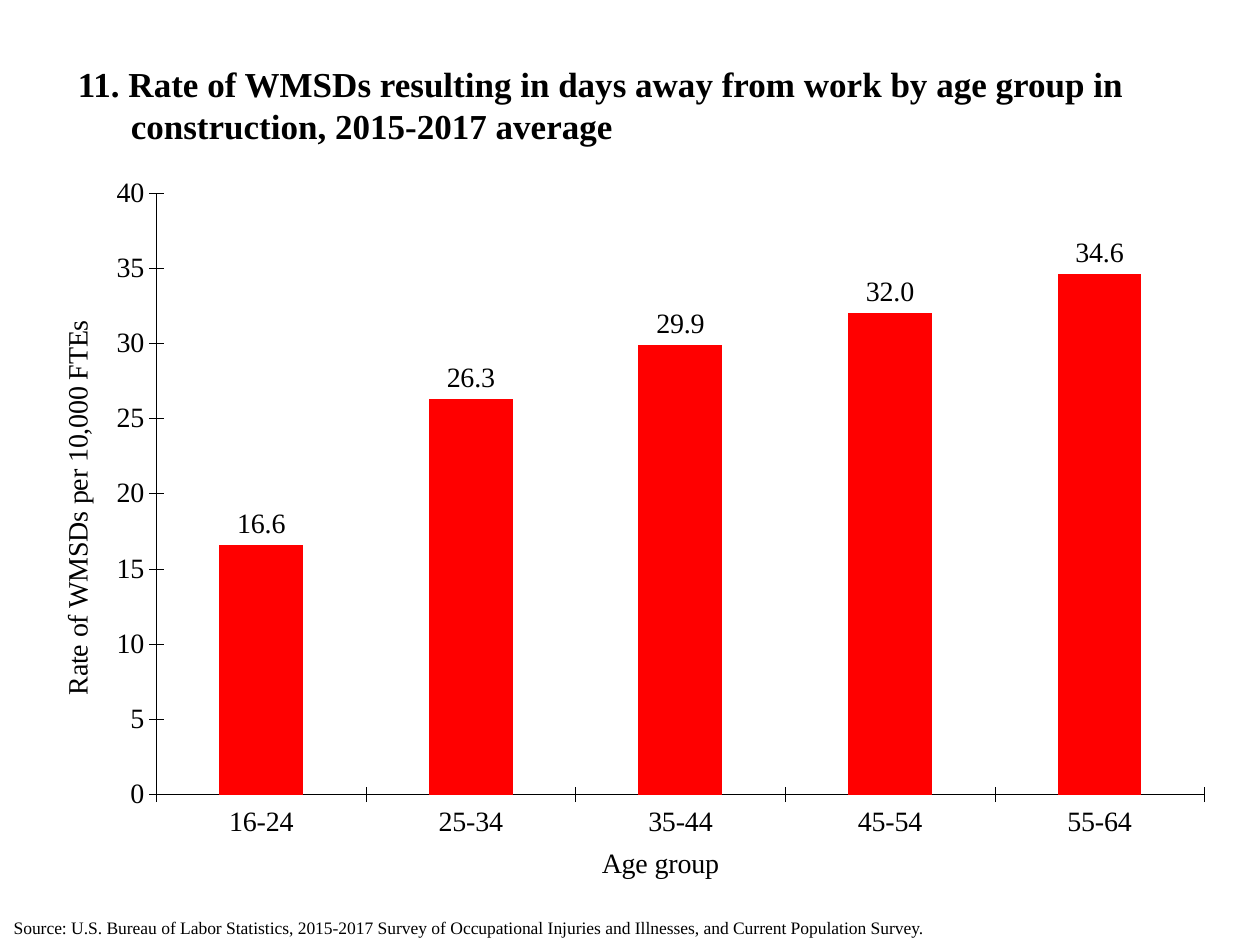
import pptx
import pptx.chart.data
import pptx.dml.color
import pptx.enum.chart
import pptx.enum.text
import pptx.oxml
import pptx.oxml.ns
import pptx.util

COLORS = {"text": "000000", "bar": "FF0000", "background": "FFFFFF"}
FONT = "Times New Roman"
WIDTH, HEIGHT = 10, 7.5
RATES = {"16-24": 16.6, "25-34": 26.3, "35-44": 29.9, "45-54": 32.0, "55-64": 34.6}
PLOT_SHARES = {"x": 0.089, "y": 0.048, "w": 0.911, "h": 0.824}


def color(name):
    return pptx.dml.color.RGBColor.from_string(COLORS[name])


def place(box):
    left, top, width, height = box
    return [pptx.util.Inches(size) for size in
            (left * WIDTH, top * HEIGHT, width * WIDTH, height * HEIGHT)]


def style(font, size, bold=False):
    font.name = FONT
    font.size = pptx.util.Pt(size)
    font.bold = bold
    font.color.rgb = color("text")


def add_text(slide, box, lines, size, bold=False, hanging=0,
             anchor=pptx.enum.text.MSO_ANCHOR.TOP):
    frame = slide.shapes.add_textbox(*place(box)).text_frame
    frame.word_wrap = True
    frame.vertical_anchor = anchor
    paragraph = frame.paragraphs[0]
    if hanging:
        indent = pptx.util.Inches(hanging)
        properties = paragraph._p.get_or_add_pPr()
        properties.set("marL", str(indent))
        properties.set("indent", str(-indent))
    for number, line in enumerate(lines):
        if number:
            paragraph.add_line_break()
        run = paragraph.add_run()
        run.text = line
        style(run.font, size, bold)


def style_axis(axis, title):
    axis.has_major_gridlines = False
    axis.major_tick_mark = pptx.enum.chart.XL_TICK_MARK.CROSS
    axis.format.line.color.rgb = color("text")
    axis.format.line.width = pptx.util.Pt(0.23)
    style(axis.tick_labels.font, 16)
    run = axis.axis_title.text_frame.paragraphs[0].add_run()
    run.text = title
    style(run.font, 16)


def set_plot_layout(chart):
    plot_area = chart._chartSpace.chart.plotArea
    for old in plot_area.findall(pptx.oxml.ns.qn("c:layout")):
        plot_area.remove(old)
    modes = '<c:layoutTarget val="inner"/><c:xMode val="edge"/><c:yMode val="edge"/>'
    shares = "".join(f'<c:{key} val="{share}"/>' for key, share in PLOT_SHARES.items())
    plot_area.insert(0, pptx.oxml.parse_xml(
        f'<c:layout {pptx.oxml.ns.nsdecls("c")}>'
        f"<c:manualLayout>{modes}{shares}</c:manualLayout></c:layout>"))


def add_rate_chart(slide, box):
    rates = pptx.chart.data.CategoryChartData()
    rates.categories = list(RATES)
    rates.add_series("Series 1", list(RATES.values()))
    chart = slide.shapes.add_chart(
        pptx.enum.chart.XL_CHART_TYPE.COLUMN_CLUSTERED, *place(box), rates).chart
    chart.has_legend = False
    chart.has_title = False
    style(chart.font, 16)
    set_plot_layout(chart)

    style_axis(chart.category_axis, "Age group")
    style_axis(chart.value_axis, "Rate of WMSDs per 10,000 FTEs")
    chart.value_axis.minimum_scale = 0
    chart.value_axis.maximum_scale = 40
    chart.value_axis.major_unit = 5
    chart.value_axis.tick_labels.number_format = "#,##0"
    chart.value_axis.tick_labels.number_format_is_linked = False

    bars = chart.plots[0]
    bars.gap_width = 150
    bars.vary_by_categories = False
    series = bars.series[0]
    series.format.fill.solid()
    series.format.fill.fore_color.rgb = color("bar")
    labels = series.data_labels
    labels.show_value = True
    labels.number_format = "#,##0.0"
    labels.number_format_is_linked = False
    labels.position = pptx.enum.chart.XL_LABEL_POSITION.OUTSIDE_END
    style(labels.font, 16)


def build_chart_slide(deck):
    slide = deck.slides.add_slide(deck.slide_layouts[6])
    slide.background.fill.solid()
    slide.background.fill.fore_color.rgb = color("background")
    add_text(slide, (0.052, 0.056, 0.896, 0.11),
             ["11. Rate of WMSDs resulting in days away from work by age group in",
              "construction, 2015-2017 average"],
             20, bold=True, hanging=0.42, anchor=pptx.enum.text.MSO_ANCHOR.MIDDLE)
    add_rate_chart(slide, (0.043, 0.167, 0.913, 0.773))
    add_text(slide, (0.001, 0.964, 0.833, 0.036),
             ["Source: U.S. Bureau of Labor Statistics, 2015-2017 Survey of Occupational "
              "Injuries and Illnesses, and Current Population Survey."], 10)


def main():
    deck = pptx.Presentation()
    deck.slide_width = pptx.util.Inches(WIDTH)
    deck.slide_height = pptx.util.Inches(HEIGHT)
    build_chart_slide(deck)
    deck.save("out.pptx")


if __name__ == "__main__":
    main()
